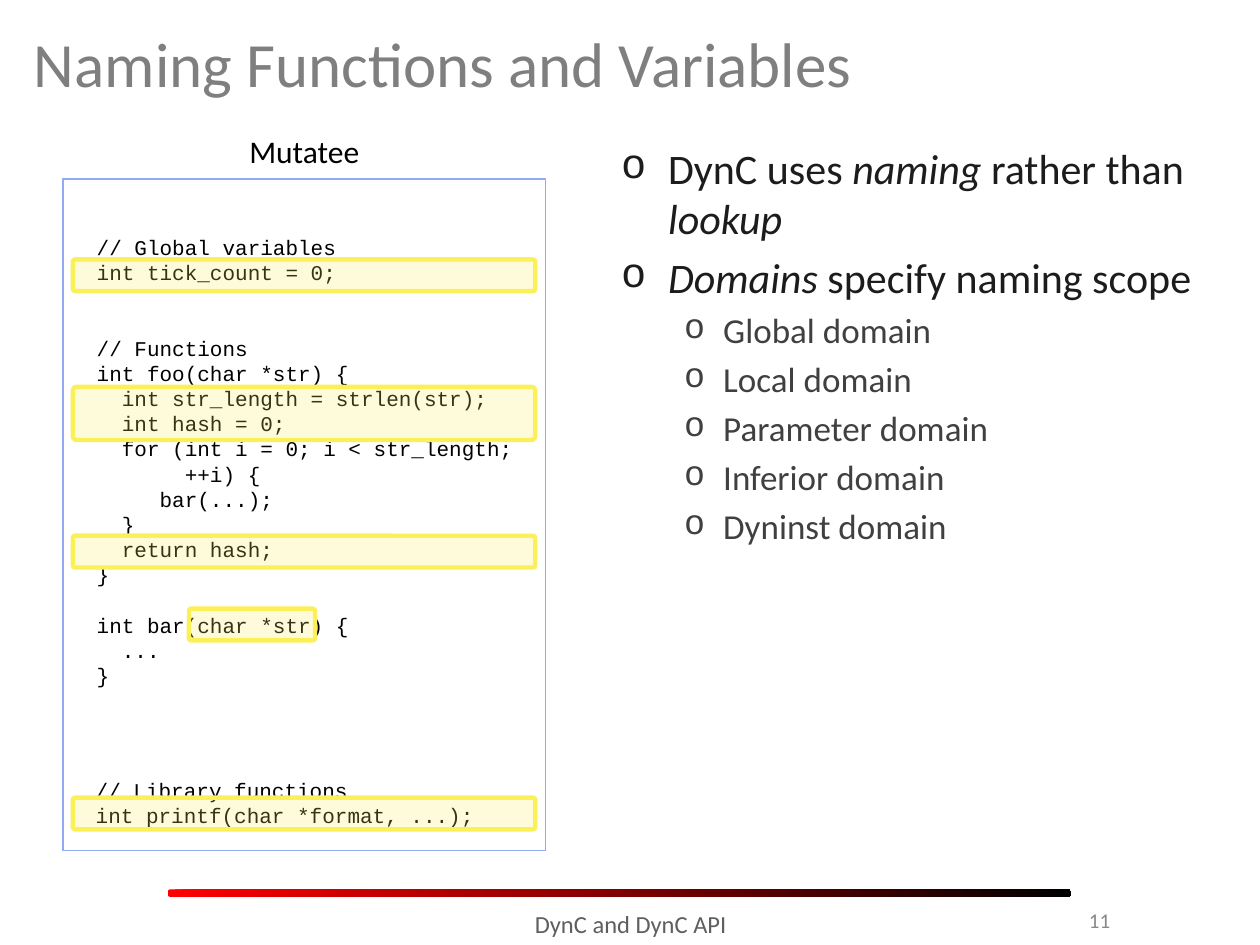
from collections import namedtuple

from lxml import etree
from pptx import Presentation
from pptx.dml.color import RGBColor
from pptx.enum.shapes import MSO_SHAPE
from pptx.enum.text import MSO_ANCHOR, PP_ALIGN
from pptx.oxml.ns import qn
from pptx.util import Cm, Pt

Box = namedtuple("Box", "left top width height")
RECT, ROUNDED = MSO_SHAPE.RECTANGLE, MSO_SHAPE.ROUNDED_RECTANGLE
LEFT, CENTER, RIGHT = PP_ALIGN.LEFT, PP_ALIGN.CENTER, PP_ALIGN.RIGHT
TOP, MIDDLE = MSO_ANCHOR.TOP, MSO_ANCHOR.MIDDLE

COLORS = {
    "title": "7F7F7F", "number": "898989", "footer": "5F5F5F", "code": "000000",
    "point": "1C1C1C", "domain": "404040", "frame": "92AAF6",
    "highlight": "FCF059", "bar_start": "FF0000", "bar_end": "000000",
}
FONTS = {
    "title": {"name": "Calibri", "size": Pt(36)},
    "number": {"name": "Calibri", "size": Pt(12)},
    "footer": {"name": "Calibri", "size": Pt(14)},
    "label": {"name": "Calibri", "size": Pt(18)},
    "code": {"name": "Courier New", "size": Pt(12)},
    "point": {"name": "Calibri", "size": Pt(24)},
    "domain": {"name": "Calibri", "size": Pt(20)},
}
CODE_PITCH = 14.4
MUTATEE_BLOCKS = [
    (0, ["// Global variables", "int tick_count = 0;"]),
    (2, ["// Functions", "int foo(char *str) {",
         "  int str_length = strlen(str);", "  int hash = 0;",
         "  for (int i = 0; i < str_length;", "       ++i) {",
         "     bar(...);", "  }", "  return hash;", "}"]),
    (1, ["int bar(char *str) {", "  ...", "}"]),
]
LIBRARY_BLOCKS = [(0, ["// Library functions", "int printf(char *format, ...);"])]
HIGHLIGHTS = [
    Box(0.2, 2.69, 9.32, 0.64), Box(0.2, 5.26, 9.32, 1.07),
    Box(0.2, 8.26, 9.32, 0.64), Box(2.54, 9.73, 2.54, 0.64),
    Box(0.2, 13.54, 9.32, 0.64),
]
POINTS = [
    [("DynC uses ", False), ("naming", True), (" rather than ", False),
     ("lookup", True)],
    [("Domains", True), (" specify naming scope", False)],
]
DOMAINS = ["Global", "Local", "Parameter", "Inferior", "Dyninst"]
LEVELS = {"point": (0.95, 0.95, 4.8), "domain": (2.06, 0.79, 4)}


def rgb(role):
    """Return the colour of a role."""
    return RGBColor.from_string(COLORS[role])


def lengths(box):
    """Turn a box in centimetres into slide lengths."""
    return [Cm(value) for value in box]


def inside(outer, part):
    """Shift a part by the corner of the box that holds it."""
    return Box(outer.left + part.left, outer.top + part.top, part.width, part.height)


def set_font(font, role, color):
    """Apply the font values and colour of a role."""
    for attribute, value in FONTS[role].items():
        setattr(font, attribute, value)
    font.color.rgb = rgb(color)


def add_frame(slide, box, anchor=TOP, wrap=True):
    """Add a text box and return its text frame."""
    frame = slide.shapes.add_textbox(*lengths(box)).text_frame
    frame.word_wrap = wrap
    frame.vertical_anchor = anchor
    return frame


def add_line(slide, box, text, role, color, align, anchor=TOP):
    """Add a text box with one line of text."""
    paragraph = add_frame(slide, box, anchor).paragraphs[0]
    paragraph.text = text
    paragraph.alignment = align
    set_font(paragraph.font, role, color)


def next_paragraph(frame):
    """Return the empty first paragraph or a new one."""
    first = frame.paragraphs[0]
    return frame.add_paragraph() if first.runs else first


def add_shape(slide, kind, box):
    """Add a preset shape without shadow."""
    shape = slide.shapes.add_shape(kind, *lengths(box))
    shape.shadow.inherit = False
    return shape


def add_code(slide, box, blocks, wrap=True):
    """Add code blocks, each set off by a number of line heights."""
    frame = add_frame(slide, box, wrap=wrap)
    for gap, lines in blocks:
        for index, line in enumerate(lines):
            paragraph = next_paragraph(frame)
            paragraph.text = line
            paragraph.line_spacing = Pt(CODE_PITCH)
            if gap and index == 0:
                paragraph.space_before = Pt(gap * CODE_PITCH)
            set_font(paragraph.font, "code", "code")


def add_highlight(slide, box):
    """Add a translucent marker over code."""
    marker = add_shape(slide, ROUNDED, box)
    marker.adjustments[0] = 0.07
    marker.fill.solid()
    marker.fill.fore_color.rgb = rgb("highlight")
    fill_color = marker.fill._xPr.find(".//" + qn("a:srgbClr"))
    etree.SubElement(fill_color, qn("a:alpha"), val="22000")
    marker.line.color.rgb = rgb("highlight")
    marker.line.width = Pt(2.5)


def add_mutatee(slide, box):
    """Add the labelled code panel with its markers."""
    outline = add_shape(slide, RECT, inside(box, Box(0, 1.07, box.width, box.height - 1.07)))
    outline.fill.background()
    outline.line.color.rgb = rgb("frame")
    outline.line.width = Pt(0.75)
    label = inside(box, Box(0, 0, box.width, 1.02))
    add_line(slide, label, "Mutatee", "label", "code", CENTER)
    add_code(slide, inside(box, Box(0.43, 2.06, 9.32, 10.01)), MUTATEE_BLOCKS)
    add_code(slide, inside(box, Box(0.41, 13, 8.26, 1.8)), LIBRARY_BLOCKS, wrap=False)
    for part in HIGHLIGHTS:
        add_highlight(slide, inside(box, part))


def add_bullet(frame, runs, role):
    """Add one bulleted paragraph of plain and italic runs."""
    paragraph = next_paragraph(frame)
    margin, hanging, before = LEVELS[role]
    properties = paragraph._p.get_or_add_pPr()
    properties.set("marL", str(Cm(margin)))
    properties.set("indent", str(-Cm(hanging)))
    if paragraph._p is not frame.paragraphs[0]._p:
        paragraph.space_before = Pt(before)
    etree.SubElement(properties, qn("a:buFont"), typeface="Courier New")
    etree.SubElement(properties, qn("a:buChar"), char="o")
    for text, italic in runs:
        run = paragraph.add_run()
        run.text = text
        run.font.italic = italic
        set_font(run.font, role, role)


def add_points(slide, box):
    """Add the naming points and the list of domains."""
    frame = add_frame(slide, box)
    for runs in POINTS:
        add_bullet(frame, runs, "point")
    for domain in DOMAINS:
        add_bullet(frame, [(f"{domain} domain", False)], "domain")


def add_title(slide, box):
    """Place and format the title placeholder."""
    title = slide.shapes.title
    title.left, title.top, title.width, title.height = lengths(box)
    title.text_frame.text = "Naming Functions and Variables"
    title.text_frame.vertical_anchor = MIDDLE
    paragraph = title.text_frame.paragraphs[0]
    paragraph.alignment = LEFT
    set_font(paragraph.runs[0].font, "title", "title")


def add_footer(slide, box):
    """Add the gradient bar, the footer text and the page number."""
    bar = add_shape(slide, ROUNDED, inside(box, Box(0, 0, box.width, 0.15)))
    bar.adjustments[0] = 0.33
    bar.line.fill.background()
    bar.fill.gradient()
    bar.fill.gradient_angle = 0
    for stop, role in zip(bar.fill.gradient_stops, ("bar_start", "bar_end")):
        stop.color.rgb = rgb(role)
    number = inside(box, Box(15.87, 0.1, 3.38, 1.02))
    add_line(slide, number, "11", "number", "number", RIGHT, MIDDLE)
    caption = inside(box, Box(2.77, 0.28, 13.13, 1.02))
    add_line(slide, caption, "DynC and DynC API", "footer", "footer", CENTER)


def main():
    """Build and save the slide."""
    deck = Presentation()
    deck.slide_width, deck.slide_height = Cm(25.4), Cm(19.05)
    slide = deck.slides.add_slide(deck.slide_layouts[5])
    add_footer(slide, Box(3.38, 17.93, 18.21, 1.12))
    add_title(slide, Box(0.43, 0.2, 24.56, 2.11))
    add_mutatee(slide, Box(1.27, 2.54, 9.73, 14.61))
    add_points(slide, Box(12.27, 2.74, 13.13, 14.4))
    deck.save("out.pptx")


if __name__ == "__main__":
    main()
